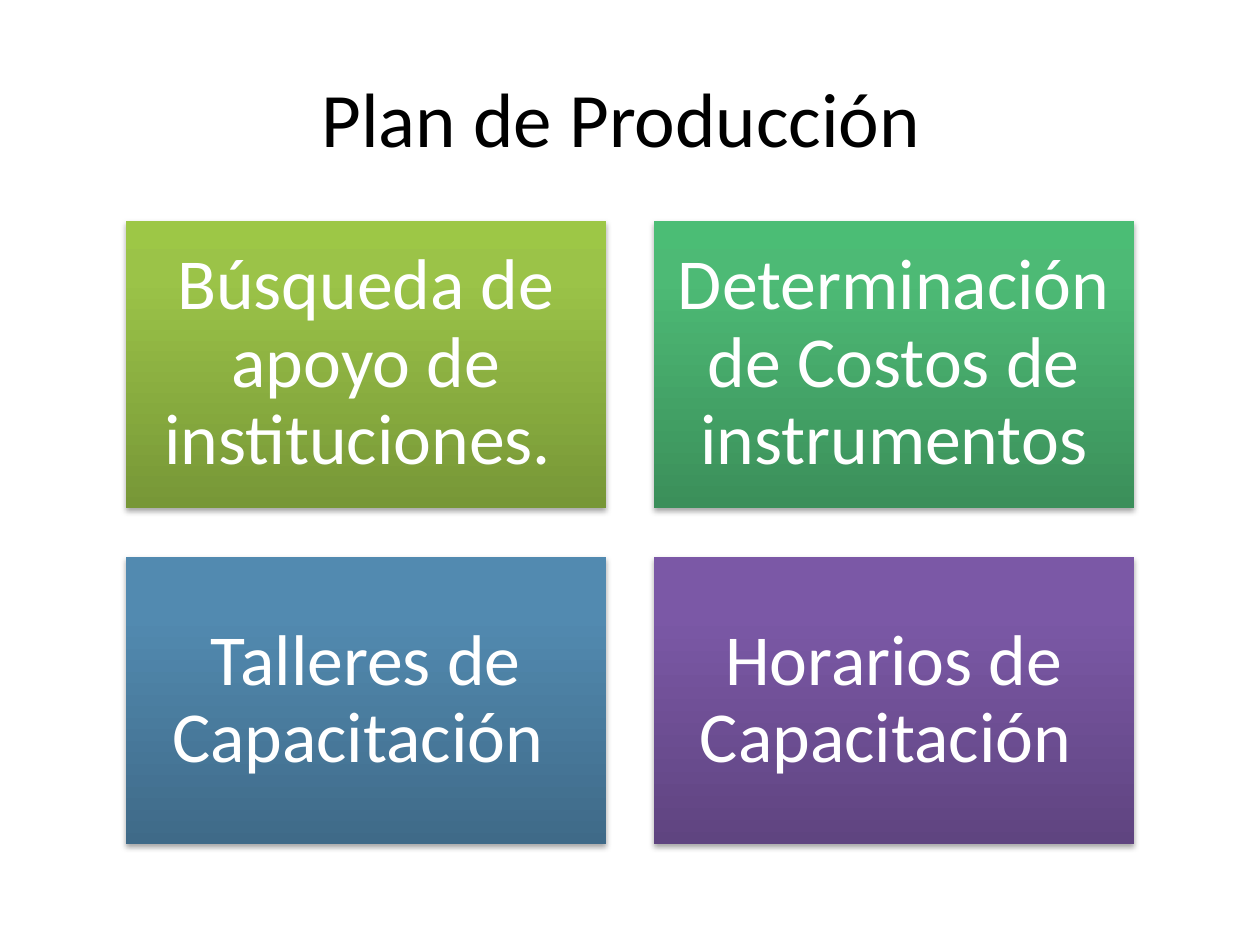
from copy import deepcopy

from lxml import etree
from pptx import Presentation
from pptx.dml.color import RGBColor
from pptx.enum import shapes, text
from pptx.oxml.ns import qn
from pptx.util import Inches, Pt

FONT = "Calibri"
BLACK = RGBColor(0x00, 0x00, 0x00)
WHITE = RGBColor(0xFF, 0xFF, 0xFF)

# Gradient colours from bottom to top
STOPS = (0, 0.8, 1)
GREEN = [RGBColor.from_string(c) for c in ("779737", "9BC348", "9DC746")]
TEAL = [RGBColor.from_string(c) for c in ("3B8F5A", "4DBA75", "4BBD75")]
BLUE = [RGBColor.from_string(c) for c in ("3F6A88", "528AB0", "518BB3")]
PURPLE = [RGBColor.from_string(c) for c in ("5F4480", "7B58A6", "7C57A8")]

CARDS = [
    ("Búsqueda de apoyo de instituciones. ", GREEN),
    ("Determinación de Costos de instrumentos", TEAL),
    ("Talleres de Capacitación ", BLUE),
    ("Horarios de Capacitación ", PURPLE),
]

# Card grid, in inches
COLS = 2
LEFT, TOP = 1, 1.75
CARD_W, CARD_H = 3.81, 2.28
GAP_X, GAP_Y = 0.38, 0.39


def write(tf, words, size, color, spacing=None, after=None):
    tf.word_wrap = True
    tf.auto_size = text.MSO_AUTO_SIZE.NONE
    tf.vertical_anchor = text.MSO_ANCHOR.MIDDLE
    p = tf.paragraphs[0]
    p.alignment = text.PP_ALIGN.CENTER
    if spacing:
        p.line_spacing = spacing
    if after:
        p.space_after = Pt(after)
    r = p.add_run()
    r.text = words
    r.font.name = FONT
    r.font.size = Pt(size)
    r.font.color.rgb = color


def fill_gradient(sp, colors):
    sp.fill.gradient()
    sp.fill.gradient_angle = 90
    stops = sp._element.spPr.find(".//" + qn("a:gsLst"))
    stops.append(deepcopy(stops[-1]))
    for stop, position, color in zip(sp.fill.gradient_stops, STOPS, colors):
        stop.position = position
        stop.color.rgb = color


def add_shadow(sp):
    sp.shadow.inherit = False
    effects = sp._element.spPr.find(qn("a:effectLst"))
    shadow = etree.SubElement(effects, qn("a:outerShdw"), blurRad=str(Pt(3.1)),
                              dist=str(Pt(1.8)), dir="5400000", rotWithShape="0")
    color = etree.SubElement(shadow, qn("a:srgbClr"), val=str(BLACK))
    etree.SubElement(color, qn("a:alpha"), val="35000")


def add_title(s, words):
    sp = s.shapes.title
    sp.left, sp.top, sp.width, sp.height = map(Inches, (0.5, 0.3, 9, 1.25))
    write(sp.text_frame, words, 44, BLACK)


def add_card(s, x, y, words, colors):
    sp = s.shapes.add_shape(shapes.MSO_SHAPE.RECTANGLE, Inches(x), Inches(y),
                            Inches(CARD_W), Inches(CARD_H))
    fill_gradient(sp, colors)
    sp.line.fill.background()
    add_shadow(sp)
    tf = sp.text_frame
    tf.margin_left = tf.margin_right = Inches(0.17)
    tf.margin_top = tf.margin_bottom = Inches(0.17)
    write(tf, words, 41, WHITE, spacing=0.9, after=14)


def main():
    prs = Presentation()
    prs.slide_width, prs.slide_height = Inches(10), Inches(7.5)
    s = prs.slides.add_slide(prs.slide_layouts[5])

    # Heading
    add_title(s, "Plan de Producción ")

    # Two-by-two grid of cards
    for i, (words, colors) in enumerate(CARDS):
        row, col = divmod(i, COLS)
        add_card(s, LEFT + col * (CARD_W + GAP_X), TOP + row * (CARD_H + GAP_Y),
                 words, colors)

    prs.save("out.pptx")


if __name__ == "__main__":
    main()
